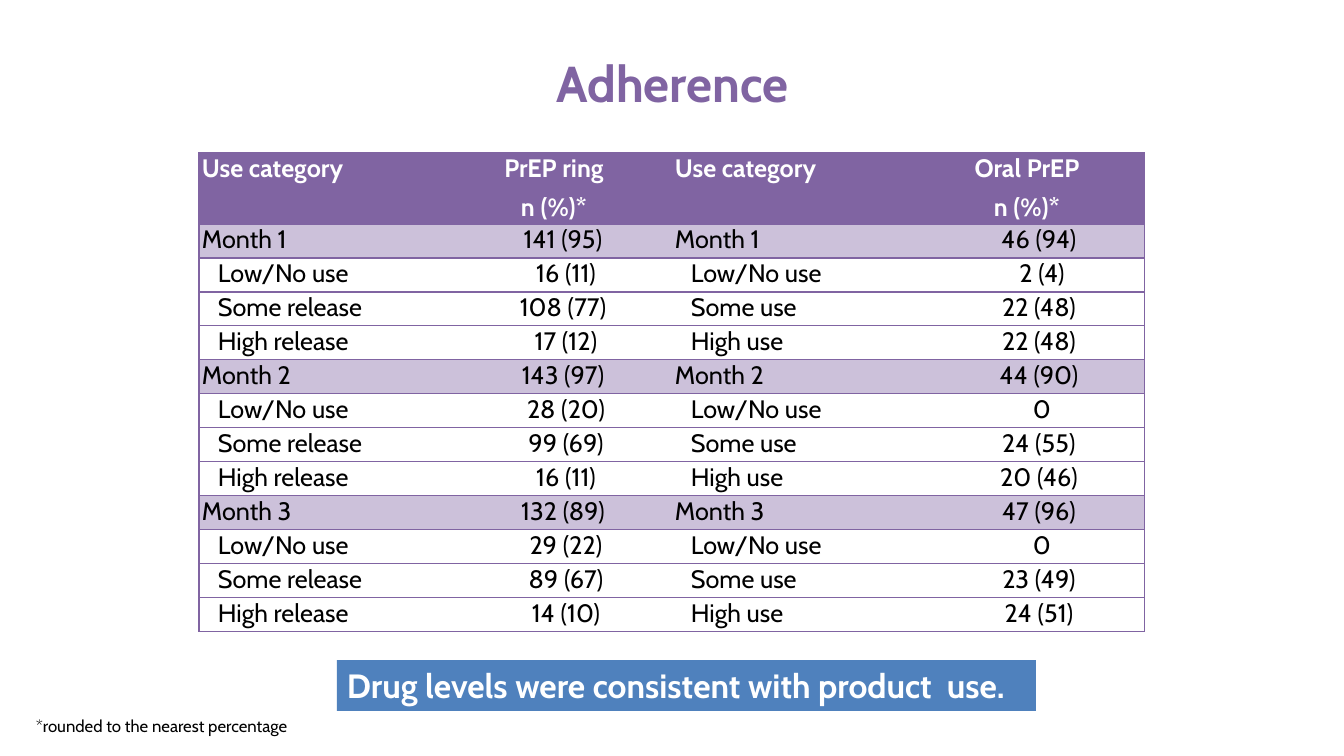
"""Build the adherence slide with its table of use by month."""
from lxml.etree import SubElement
from pptx import Presentation
from pptx.dml.color import RGBColor
from pptx.enum.shapes import MSO_SHAPE
from pptx.enum.text import MSO_ANCHOR, PP_ALIGN
from pptx.oxml.ns import qn
from pptx.util import Emu, Pt

PX = 914400 / 100.8
PLUM, LILAC, WHITE, BLACK, BLUE = "8064A2", "CCC1DA", "FFFFFF", "000000", "4F81BD"
LEFT, MID = PP_ALIGN.LEFT, PP_ALIGN.CENTER


def px(*nums):
    return [Emu(round(num * PX)) for num in nums]


def write(frame, text, size, hue, bold=False, align=LEFT, **form):
    frame.word_wrap = True
    frame.text = text
    for para in frame.paragraphs:
        for key, val in {"alignment": align, **form}.items():
            setattr(para, key, val)
        look = {"name": "Cabin", "size": Pt(size), "bold": bold}
        for key, val in look.items():
            setattr(para.font, key, val)
        para.font.color.rgb = RGBColor.from_string(hue)


deck = Presentation()
deck.slide_width, deck.slide_height = px(1344, 756)
slide = deck.slides.add_slide(deck.slide_layouts[6])
shapes = slide.shapes

title = shapes.add_textbox(*px(199, 68, 947, 58))
write(title.text_frame, "Adherence", 36, PLUM, True, MID, line_spacing=Pt(28.5))

ring = ["Low/No use", "Some release", "High release"]
oral = ["Low/No use", "Some use", "High use"]
counts = [
    [("141 (95)", "46 (94)"), ("16 (11)", "2 (4)"), ("108 (77)", "22 (48)"), ("17 (12)", "22 (48)")],
    [("143 (97)", "44 (90)"), ("28 (20)", "0"), ("99 (69)", "24 (55)"), ("16 (11)", "20 (46)")],
    [("132 (89)", "47 (96)"), ("29 (22)", "0"), ("89 (67)", "23 (49)"), ("14 (10)", "24 (51)")],
]
rows = [("Use category", "PrEP ring\nn (%)*", "Use category", "Oral PrEP\nn (%)*")]
for num, month in enumerate(counts, 1):
    name = f"Month {num}"
    for left, right, pair in zip([name] + ring, [name] + oral, month):
        rows.append((left, pair[0], right, pair[1]))

table = shapes.add_table(len(rows), 4, *px(199, 153, 946, 479)).table
for col, wide in zip(table.columns, px(237, 236, 237, 236)):
    col.width = wide
for r, row in enumerate(rows):
    table.rows[r].height = px(34 if r else 71)[0]
    head, month = r == 0, r % 4 == 1
    for c, text in enumerate(row):
        cell = table.cell(r, c)
        if head:
            pad = 0
        elif c % 2:
            pad = 6 * max(3, min(5, 11 - len(text)))
        else:
            pad = 0 if month else 16
        sides = px(3 + pad, 3, 0, 0)
        for side, size in zip(("left", "right", "top", "bottom"), sides):
            setattr(cell, f"margin_{side}", size)
        write(cell.text_frame, text, 18, WHITE if head else BLACK, head,
              MID if c % 2 else LEFT, space_after=Pt(3))
        for para in cell.text_frame.paragraphs[1:]:
            para.space_before = Pt(3)
        props = cell._tc.get_or_add_tcPr()
        for side, shown in {"L": c == 0, "R": c == 3, "T": True, "B": True}.items():
            line = SubElement(props, qn(f"a:ln{side}"), w=str(Pt(1)))
            if shown:
                fill = SubElement(line, qn("a:solidFill"))
                SubElement(fill, qn("a:srgbClr"), val=PLUM)
            else:
                SubElement(line, qn("a:noFill"))
        cell.fill.solid()
        cell.fill.fore_color.rgb = RGBColor.from_string(PLUM if head else LILAC if month else WHITE)

bar = shapes.add_shape(MSO_SHAPE.RECTANGLE, *px(337, 660, 699, 51))
bar.shadow.inherit = False
bar.fill.solid()
bar.fill.fore_color.rgb = RGBColor.from_string(BLUE)
bar.line.fill.background()
bar.text_frame.vertical_anchor = MSO_ANCHOR.TOP
write(bar.text_frame, "Drug levels were consistent with product  use.", 24, WHITE, True)

note = shapes.add_textbox(*px(26, 711, 421, 30))
write(note.text_frame, "*rounded to the nearest percentage", 12, BLACK)

deck.save("out.pptx")
